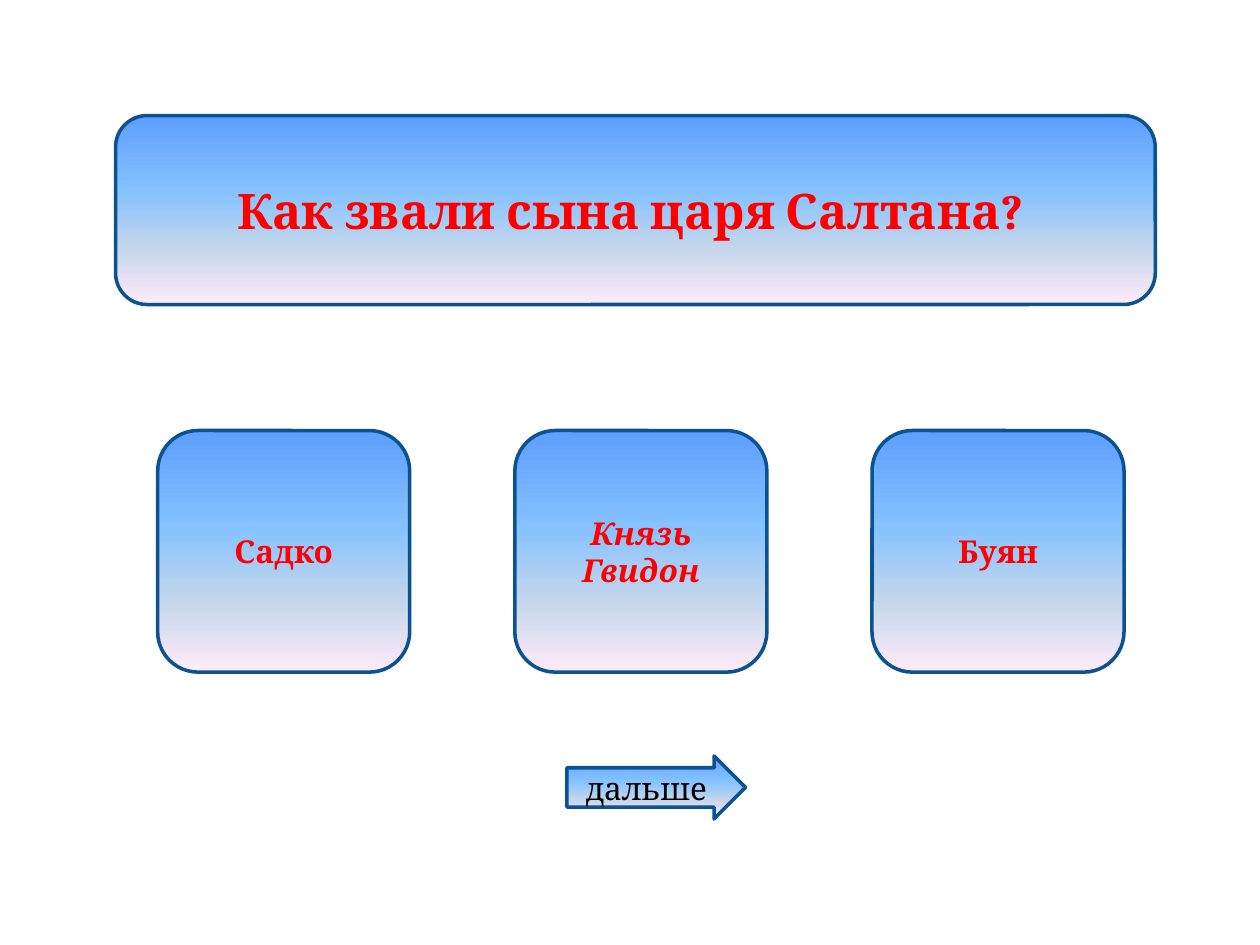
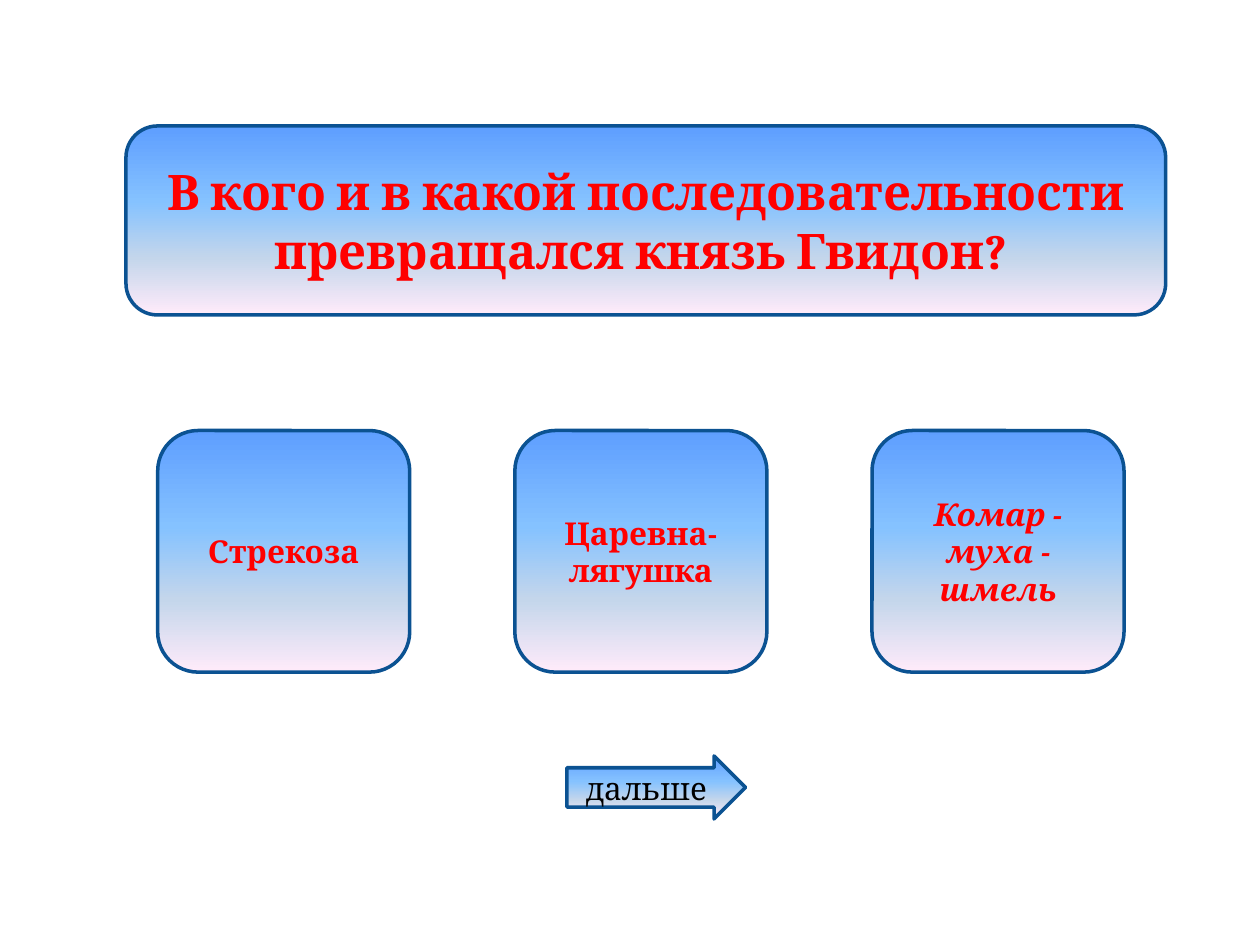
from lxml import etree
from pptx import Presentation
from pptx.dml.color import RGBColor
from pptx.enum import shapes, text
from pptx.oxml.ns import qn
from pptx.util import Cm, Pt

FONT = "Cambria"
RED, BLACK, OUTLINE = "FF0000", "000000", "0B5292"
GRADIENT = [(0, "5E9EFF"), (40, "85C2FF"), (70, "C4D6EB"), (100, "FFEBFA")]

QUESTION_SIZE = (20.96, 3.81)
ANSWER_LEFT, ANSWER_TOP, ANSWER_STEP = 3.18, 8.68, 7.2
ANSWER_SIZE = (5.08, 4.87)
NEXT_BOX = (11.43, 15.24, 3.6, 1.27)

# Offset of the question panel, question, answers, index of the right answer
QUIZ = [
    (2.33, "Как звали сына царя Салтана? ",
     ["Садко", "Князь Гвидон", "Буян"], 1),
    (2.54, "В кого и в какой последовательности превращался князь Гвидон? ",
     ["Стрекоза", "Царевна-лягушка", "Комар - муха - шмель"], 2),
]


def color(hex_string):
    return RGBColor.from_string(hex_string)


def fill_gradient(shape):
    """Fill the shape from top to bottom with the shared colour stops."""
    shape.fill.gradient()
    shape.fill.gradient_angle = 270
    stops = shape.element.spPr.find(qn("a:gradFill")).find(qn("a:gsLst"))
    for stop in list(stops):
        stops.remove(stop)
    for percent, hex_string in GRADIENT:
        stop = etree.SubElement(stops, qn("a:gs"), pos=str(percent * 1000))
        etree.SubElement(stop, qn("a:srgbClr"), val=hex_string)


def add_panel(slide, kind, box):
    """Add a preset shape with the shared fill and outline; box is in cm."""
    shape = slide.shapes.add_shape(kind, *map(Cm, box))
    shape.shadow.inherit = False
    fill_gradient(shape)
    shape.line.color.rgb = color(OUTLINE)
    shape.line.width = Pt(2)
    return shape


def write_text(shape, words, size, hex_string, bold=False, italic=False):
    frame = shape.text_frame
    frame.text = words
    frame.word_wrap = True
    frame.auto_size = text.MSO_AUTO_SIZE.NONE
    frame.vertical_anchor = text.MSO_ANCHOR.MIDDLE
    paragraph = frame.paragraphs[0]
    paragraph.alignment = text.PP_ALIGN.CENTER
    for run in paragraph.runs:
        run.font.name = FONT
        run.font.size = Pt(size)
        run.font.bold = bold
        run.font.italic = italic
        run.font.color.rgb = color(hex_string)


def add_question(slide, offset, question):
    """Lay the slide title over a rounded panel."""
    panel = add_panel(slide, shapes.MSO_SHAPE.ROUNDED_RECTANGLE,
                      (offset, offset, *QUESTION_SIZE))
    title = slide.shapes.title
    title.left, title.top = panel.left, panel.top
    title.width, title.height = panel.width, panel.height
    write_text(title, question, 28, RED, bold=True)
    panel.element.addnext(title.element)


def add_answers(slide, answers, right_answer):
    for index, answer in enumerate(answers):
        box = (ANSWER_LEFT + index * ANSWER_STEP, ANSWER_TOP, *ANSWER_SIZE)
        card = add_panel(slide, shapes.MSO_SHAPE.ROUNDED_RECTANGLE, box)
        write_text(card, answer, 18, RED, bold=True,
                   italic=index == right_answer)


def add_next_arrow(slide):
    arrow = add_panel(slide, shapes.MSO_SHAPE.RIGHT_ARROW, NEXT_BOX)
    arrow.adjustments[0] = 0.625
    arrow.adjustments[1] = 0.5
    write_text(arrow, "дальше", 18, BLACK)


def main():
    presentation = Presentation()
    presentation.slide_width = Cm(25.4)
    presentation.slide_height = Cm(19.05)
    title_only = presentation.slide_layouts[5]
    for offset, question, answers, right_answer in QUIZ:
        slide = presentation.slides.add_slide(title_only)
        add_question(slide, offset, question)
        add_answers(slide, answers, right_answer)
        add_next_arrow(slide)
    presentation.save("out.pptx")


if __name__ == "__main__":
    main()
